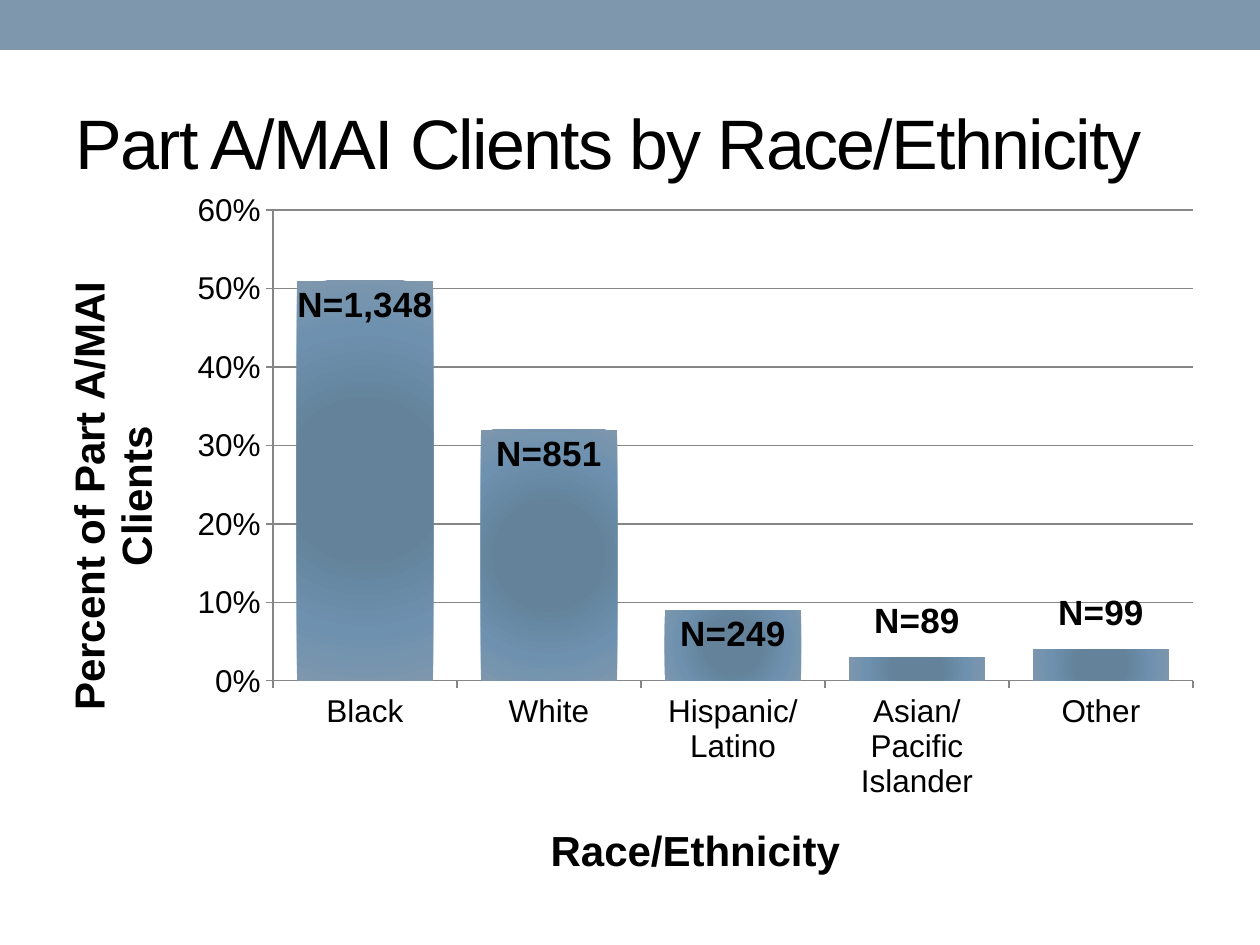
from lxml import etree
from pptx import Presentation
from pptx.chart.data import CategoryChartData
from pptx.dml.color import RGBColor
from pptx.enum.chart import XL_CHART_TYPE, XL_LABEL_POSITION, XL_TICK_MARK
from pptx.enum.shapes import MSO_SHAPE
from pptx.enum.text import MSO_ANCHOR, PP_ALIGN
from pptx.oxml import parse_xml
from pptx.oxml.ns import nsdecls, qn
from pptx.util import Emu, Pt

STACKED = XL_CHART_TYPE.COLUMN_STACKED
INSIDE_END = XL_LABEL_POSITION.INSIDE_END
OUTSIDE = XL_TICK_MARK.OUTSIDE
RECT = MSO_SHAPE.RECTANGLE
MIDDLE = MSO_ANCHOR.MIDDLE
LEFT = PP_ALIGN.LEFT

PX_PER_INCH = 126
CHART_W, CHART_H = 1186, 730
FONT = "Arial"
BLACK = "000000"
SLATE = "7E97AD"
GRID = "868686"
BAR_STOPS = [(0, "64839B"), (36, "64839B"), (72, "6E91AF"), (100, SLATE)]

CLIENTS = [
    ("Black", 0.51, "N=1,348"),
    ("White", 0.32, "N=851"),
    ("Hispanic/Latino", 0.09, "N=249"),
    ("Asian/Pacific Islander", 0.03, "N=89"),
    ("Other", 0.04, "N=99"),
]
SHORT_BAR = 0.05
LABEL_LIFT = -60


def px(n):
    return Emu(round(n * 914400 / PX_PER_INCH))


def rgb(value):
    return RGBColor.from_string(value)


def set_layout(parent, index, modes, **lengths):
    for old in parent.findall(qn("c:layout")):
        parent.remove(old)
    layout = parse_xml(f"<c:layout {nsdecls('c')}/>")
    manual = etree.SubElement(layout, qn("c:manualLayout"))
    for tag, value in modes.items():
        etree.SubElement(manual, qn(f"c:{tag}")).set("val", value)
    for tag, length in lengths.items():
        share = length / (CHART_W if tag in "xw" else CHART_H)
        etree.SubElement(manual, qn(f"c:{tag}")).set("val", str(share))
    parent.insert(index, layout)


def hide_leader_lines(labels):
    for line in labels.findall(qn("c:showLeaderLines")):
        line.set("val", "0")
    labels.append(parse_xml(
        f'<c:extLst {nsdecls("c")}>'
        '<c:ext uri="{CE6537A1-D6FC-4f65-9D91-7224C49458BB}"'
        ' xmlns:c15="http://schemas.microsoft.com/office/drawing/2012/chart">'
        '<c15:showLeaderLines val="0"/></c:ext></c:extLst>'
    ))


def radial_fill(stops):
    marks = "".join(
        f'<a:gs pos="{pos * 1000}"><a:srgbClr val="{color}"/></a:gs>'
        for pos, color in stops
    )
    return parse_xml(
        f'<a:gradFill {nsdecls("a")} rotWithShape="1"><a:gsLst>{marks}</a:gsLst>'
        '<a:path path="circle"><a:fillToRect l="50000" t="50000" r="50000" b="50000"/>'
        "</a:path></a:gradFill>"
    )


class Deck:
    def __init__(self, width, height):
        self.prs = Presentation()
        self.prs.slide_width, self.prs.slide_height = px(width), px(height)
        self.s = self.prs.slides.add_slide(self.prs.slide_layouts[5])

    def style(self, font, size, bold=False):
        font.name, font.size, font.bold = FONT, Pt(size), bold
        font.color.rgb = rgb(BLACK)

    def band(self, x, y, w, h, color):
        sp = self.s.shapes.add_shape(RECT, px(x), px(y), px(w), px(h))
        sp.shadow.inherit = False
        sp.fill.solid()
        sp.fill.fore_color.rgb = rgb(color)
        sp.line.fill.background()

    def title(self, text, x, y, w, h):
        sp = self.s.shapes.title
        sp.left, sp.top, sp.width, sp.height = px(x), px(y), px(w), px(h)
        tf = sp.text_frame
        tf.text = text
        tf.vertical_anchor = MIDDLE
        p = tf.paragraphs[0]
        p.alignment = LEFT
        r = p.runs[0]
        self.style(r.font, 40)
        r._r.get_or_add_rPr().set("spc", "-100")

    def grey_line(self, line):
        line.color.rgb = rgb(GRID)
        line.width = Pt(0.75)

    def axis(self, axis, text, x, y):
        axis.major_tick_mark = OUTSIDE
        self.grey_line(axis.format.line)
        self.style(axis.tick_labels.font, 18)
        tf = axis.axis_title.text_frame
        tf.text = text
        self.style(tf.paragraphs[0].runs[0].font, 24, True)
        set_layout(axis.axis_title._element, 1,
                   {"xMode": "edge", "yMode": "edge"}, x=x, y=y)

    def bar_labels(self, chart, rows):
        points = chart.plots[0].series[0].points
        for i, (_, _, text) in enumerate(rows):
            label = points[i].data_label
            label.text_frame.text = text
            self.style(label.text_frame.paragraphs[0].runs[0].font, 20, True)
            label.position = INSIDE_END
        for (_, share, _), node in zip(rows, chart.element.xpath(".//c:dLbl")):
            if share < SHORT_BAR:
                set_layout(node, 1, {}, x=0, y=LABEL_LIFT)
        hide_leader_lines(chart.element.xpath(".//c:ser/c:dLbls")[0])

    def column_chart(self, rows, x, y):
        data = CategoryChartData(number_format="0%")
        data.categories = [name for name, _, _ in rows]
        data.add_series("Series 1", [share for _, share, _ in rows])
        chart = self.s.shapes.add_chart(
            STACKED, px(x), px(y), px(CHART_W), px(CHART_H), data).chart
        chart.has_legend = chart.has_title = False
        self.style(chart.font, 18)
        plot = chart.plots[0]
        plot.gap_width, plot.overlap = 35, 100
        plot.vary_by_categories = False

        self.axis(chart.category_axis, "Race/Ethnicity", 511, 637)
        value_axis = chart.value_axis
        self.axis(value_axis, "Percent of Part A/MAI Clients", 22, 95)
        value_axis.minimum_scale, value_axis.maximum_scale = 0, 0.6
        value_axis.major_unit = 0.1
        value_axis.tick_labels.number_format = "0%"
        value_axis.tick_labels.number_format_is_linked = False
        self.grey_line(value_axis.major_gridlines.format.line)

        fill = plot.series[0].format.fill
        fill.solid()
        fill.fore_color.rgb = rgb(SLATE)
        solid = chart.element.xpath(".//c:ser/c:spPr/a:solidFill")[0]
        solid.getparent().replace(solid, radial_fill(BAR_STOPS))
        self.bar_labels(chart, rows)
        set_layout(
            chart.element.xpath(".//c:plotArea")[0], 0,
            {"layoutTarget": "inner", "xMode": "edge", "yMode": "edge"},
            x=241, y=31, w=920, h=471,
        )


def main():
    deck = Deck(1260, 945)
    deck.band(0, 0, 1260, 50, SLATE)
    deck.title("Part A/MAI Clients by Race/Ethnicity", 63, 73, 1166, 136)
    deck.column_chart(CLIENTS, 32, 179)
    deck.prs.save("out.pptx")


if __name__ == "__main__":
    main()
